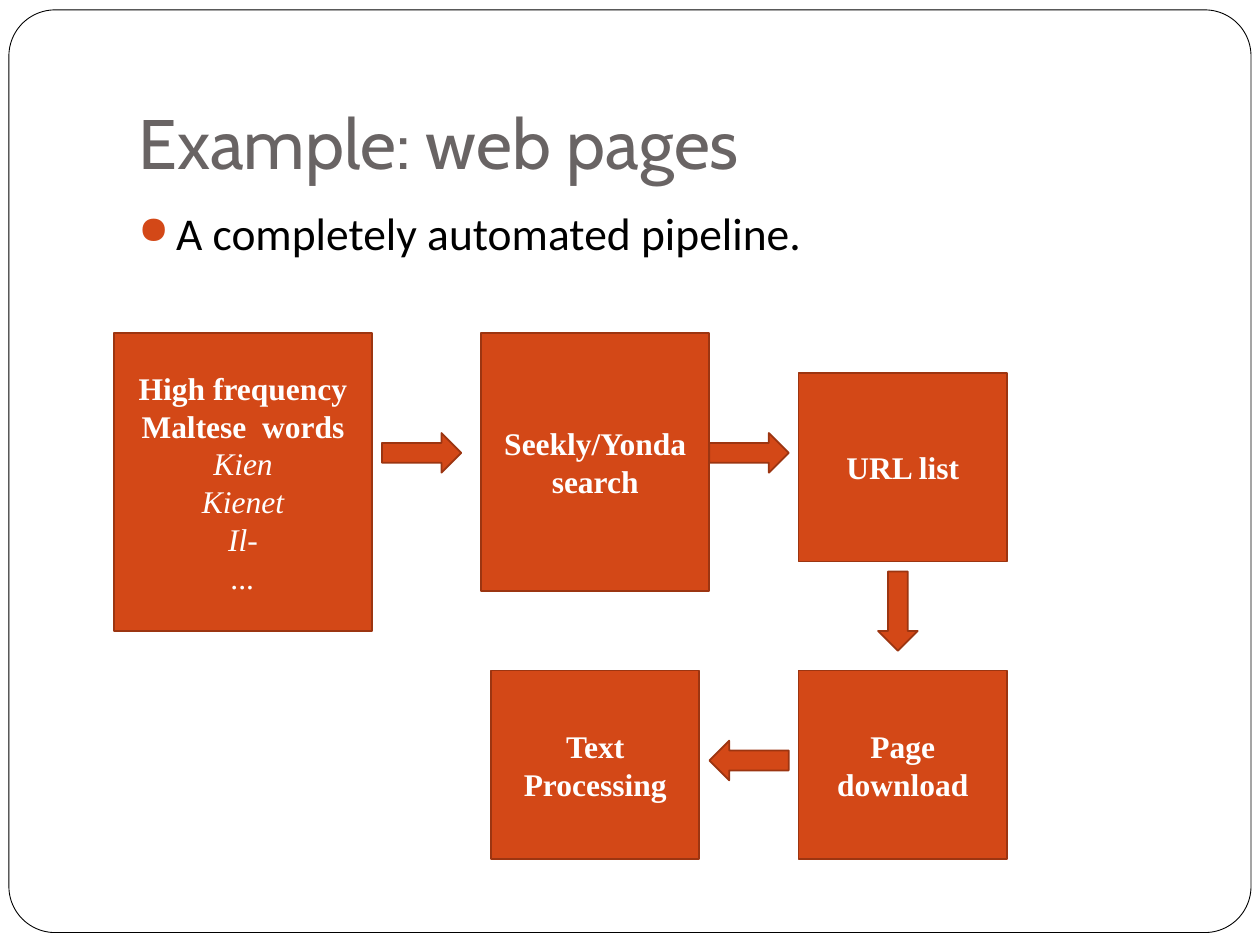
from lxml import etree
from pptx import Presentation
from pptx.dml.color import RGBColor
from pptx.enum.shapes import MSO_SHAPE
from pptx.enum.text import MSO_ANCHOR, MSO_AUTO_SIZE, PP_ALIGN
from pptx.oxml.ns import qn
from pptx.util import Cm, Pt

RECT, FRAME, ARROW = MSO_SHAPE.RECTANGLE, MSO_SHAPE.ROUNDED_RECTANGLE, MSO_SHAPE.RIGHT_ARROW
LEFT, CENTER = PP_ALIGN.LEFT, PP_ALIGN.CENTER
MIDDLE, BOTTOM = MSO_ANCHOR.MIDDLE, MSO_ANCHOR.BOTTOM
COLORS = {"black": "000000", "white": "FFFFFF", "title": "696464",
          "fill": "D34817", "line": "9C3511"}
TITLE = {"name": "Cabin", "size": Pt(40), "bold": False}
BODY = {"name": "Calibri", "size": Pt(26)}
HEADING = {"name": "Times New Roman", "size": Pt(18), "bold": True}
EXAMPLE = {"name": "Times New Roman", "size": Pt(18), "italic": True}


def rgb(name):
    """Return the named colour."""
    return RGBColor.from_string(COLORS[name])


def set_attrs(obj, values):
    """Set every attribute named in a dict."""
    for name, value in values.items():
        setattr(obj, name, value)


def add_run(p, text, font, color):
    """Add a formatted run to a paragraph."""
    r = p.add_run()
    r.text = text
    set_attrs(r.font, font)
    r.font.color.rgb = rgb(color)


def add_outlined(slide, kind, box, line, width):
    """Add a preset shape with a plain outline."""
    sp = slide.shapes.add_shape(kind, *map(Cm, box))
    sp.shadow.inherit = False
    sp.line.color.rgb = rgb(line)
    sp.line.width = Pt(width)
    return sp


def add_frame(slide):
    """Add the rounded slide border."""
    sp = add_outlined(slide, FRAME, (0.18, 0.2, 25.04, 18.6), "black", 0.5)
    sp.adjustments[0] = 0.05
    sp.fill.background()


def format_title(slide, text):
    """Place and fill the title placeholder."""
    sp = slide.shapes.title
    set_attrs(sp, {"left": Cm(2.54), "top": Cm(0.76), "width": Cm(21.59), "height": Cm(3.18)})
    tf = sp.text_frame
    set_attrs(tf, {"auto_size": MSO_AUTO_SIZE.NONE, "vertical_anchor": BOTTOM,
                   "margin_bottom": Cm(0.25)})
    p = tf.paragraphs[0]
    p.alignment = LEFT
    add_run(p, text, TITLE, "title")


def add_bullet(slide, text):
    """Add the bulleted body text."""
    tf = slide.shapes.add_textbox(Cm(2.54), Cm(4.01), Cm(21.59), Cm(12.7)).text_frame
    tf.word_wrap = True
    p = tf.paragraphs[0]
    p.space_before = Pt(5.8)
    add_run(p, text, BODY, "black")
    pPr = p._p.get_or_add_pPr()
    pPr.set("marL", str(Cm(0.76)))
    pPr.set("indent", str(Cm(-0.76)))
    color = etree.SubElement(pPr, qn("a:buClr"))
    etree.SubElement(color, qn("a:srgbClr"), val=COLORS["fill"])
    etree.SubElement(pPr, qn("a:buSzPct"), val="85000")
    etree.SubElement(pPr, qn("a:buChar"), char="●")


def add_step(slide, box, heading, examples=()):
    """Add a pipeline step with optional example words."""
    sp = add_outlined(slide, RECT, box, "line", 1)
    sp.fill.solid()
    sp.fill.fore_color.rgb = rgb("fill")
    tf = sp.text_frame
    set_attrs(tf, {"word_wrap": True, "vertical_anchor": MIDDLE})
    lines = [(heading, HEADING)] + [(word, EXAMPLE) for word in examples]
    for i, (text, font) in enumerate(lines):
        p = tf.add_paragraph() if i else tf.paragraphs[0]
        p.alignment = CENTER
        add_run(p, text, font, "white")


def add_arrow(slide, left, top, rotation=0):
    """Add a block arrow turned by the given angle."""
    sp = add_outlined(slide, ARROW, (left, top, 1.6, 0.8), "line", 1)
    sp.fill.solid()
    sp.fill.fore_color.rgb = rgb("fill")
    sp.rotation = rotation


def main():
    """Build the pipeline slide."""
    prs = Presentation()
    prs.slide_width, prs.slide_height = Cm(25.4), Cm(19.05)
    slide = prs.slides.add_slide(prs.slide_layouts[5])
    add_frame(slide)
    format_title(slide, "Example: web pages")
    add_bullet(slide, "A completely automated pipeline.")

    add_step(slide, (2.3, 6.72, 5.2, 6), "High frequency Maltese  words",
             ("Kien", "Kienet", "Il-", "..."))
    add_step(slide, (9.7, 6.72, 4.6, 5.2), "Seekly/Yonda search")
    for left, top, heading in ((16.1, 7.52, "URL list"), (16.1, 13.52, "Page download"),
                               (9.9, 13.52, "Text Processing")):
        add_step(slide, (left, top, 4.2, 3.8), heading)

    for left, top, rotation in ((7.7, 8.73, 0), (14.3, 8.73, 0),
                                (17.3, 11.92, 90), (14.3, 14.93, 180)):
        add_arrow(slide, left, top, rotation)
    prs.save("out.pptx")


if __name__ == "__main__":
    main()
